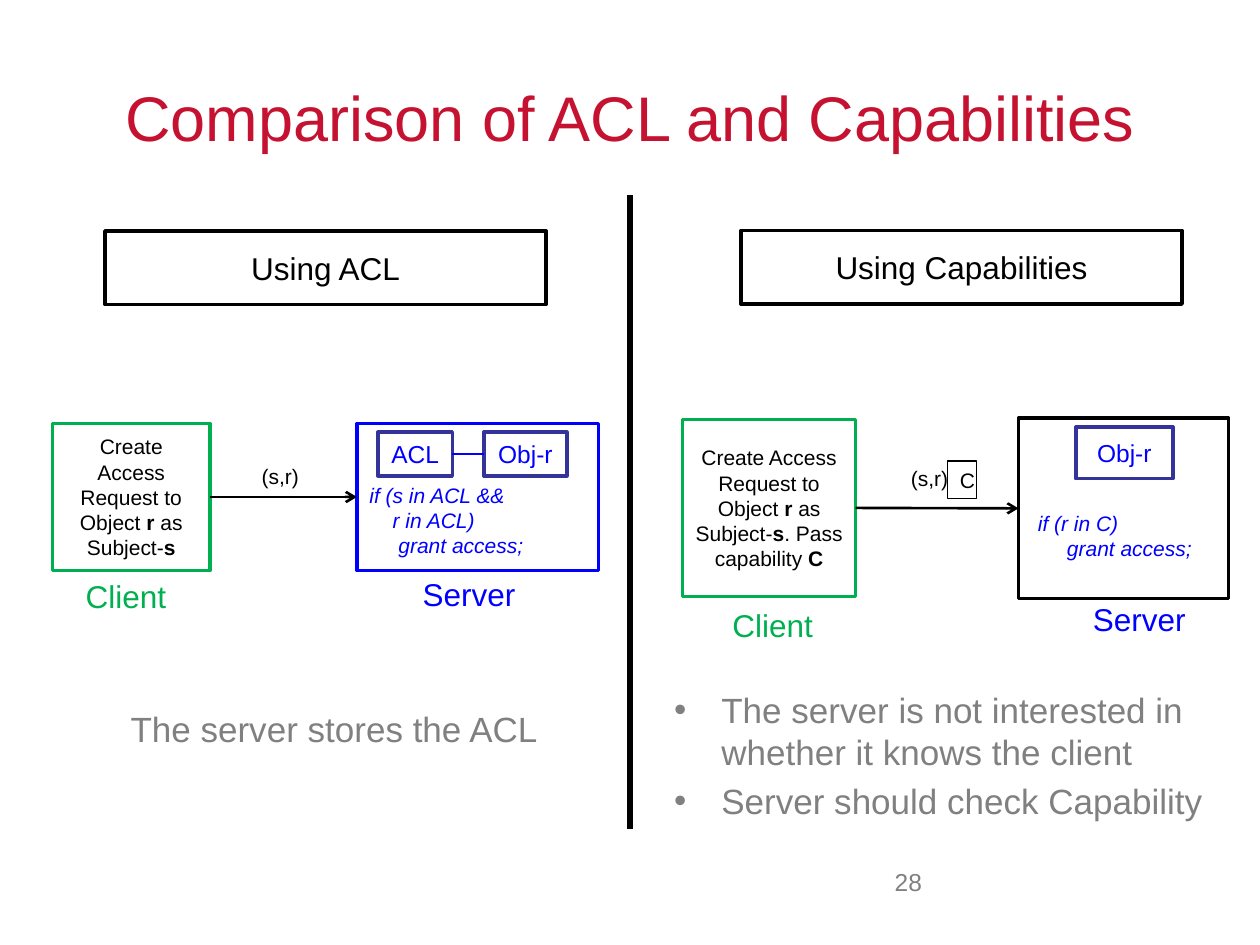
import dataclasses

import pptx
import pptx.dml.color
import pptx.enum.shapes
import pptx.enum.text
import pptx.oxml
import pptx.oxml.ns
import pptx.util

Pt = pptx.util.Pt
ALIGN = pptx.enum.text.PP_ALIGN
ANCHOR = pptx.enum.text.MSO_ANCHOR


def rgb(code):
    return pptx.dml.color.RGBColor.from_string(code)


@dataclasses.dataclass(frozen=True)
class Theme:
    font: str = "Arial"
    title_red: str = "C41230"
    grey: str = "808080"
    black: str = "000000"
    white: str = "FFFFFF"
    client_green: str = "00B050"
    server_blue: str = "0000FF"
    object_navy: str = "333399"
    title: int = 36
    note: int = 20
    label: int = 18
    item: int = 14
    detail: int = 12


THEME = Theme()


@dataclasses.dataclass(frozen=True)
class Box:
    left: float
    top: float
    width: float
    height: float

    def inner(self, left, top, width, height):
        return Box(self.left + left, self.top + top, width, height)

    def lengths(self):
        return [Pt(value) for value in dataclasses.astuple(self)]


def apply(target, values):
    for name, value in values.items():
        setattr(target, name, value)


def write(frame, paragraphs, size, color, align=ALIGN.LEFT, italic=False):
    """Each paragraph is a list of runs; a run in BOLD_TERMS form is (text, bold)."""
    font_format = {"name": THEME.font, "size": Pt(size), "italic": italic}
    for index, runs in enumerate(paragraphs):
        paragraph = frame.paragraphs[0] if index == 0 else frame.add_paragraph()
        apply(paragraph, {"alignment": align, "space_before": Pt(0)})
        for text, bold in runs:
            if text == "\n":
                paragraph.add_line_break()
                continue
            run = paragraph.add_run()
            run.text = text
            apply(run.font, {**font_format, "bold": bold})
            run.font.color.rgb = rgb(color)


def plain(*lines):
    return [[(line, False)] for line in lines]


def add_text(slide, box, paragraphs, size, color, wrap=True, **style):
    frame = slide.shapes.add_textbox(*box.lengths()).text_frame
    frame.word_wrap = wrap
    write(frame, paragraphs, size, color, **style)


def add_frame(slide, box, line, paragraphs=(), size=THEME.detail, color=THEME.black,
              weight=2, filled=True, anchor=ANCHOR.MIDDLE):
    shape = slide.shapes.add_shape(pptx.enum.shapes.MSO_SHAPE.RECTANGLE, *box.lengths())
    shape.shadow.inherit = False
    if filled:
        shape.fill.solid()
        shape.fill.fore_color.rgb = rgb(THEME.white)
    else:
        shape.fill.background()
    shape.line.color.rgb = rgb(line)
    shape.line.width = Pt(weight)
    apply(shape.text_frame, {"word_wrap": True, "vertical_anchor": anchor})
    write(shape.text_frame, paragraphs, size, color, ALIGN.CENTER)
    return shape


def add_line(slide, color, weight, start=(0, 0), end=(0, 0)):
    line = slide.shapes.add_connector(
        pptx.enum.shapes.MSO_CONNECTOR.STRAIGHT, *[Pt(v) for v in (*start, *end)])
    line.line.color.rgb = rgb(color)
    line.line.width = Pt(weight)
    properties = line.line._get_or_add_ln().getparent()
    properties.append(pptx.oxml.parse_xml(
        f'<a:effectLst {pptx.oxml.ns.nsdecls("a")}/>'))
    return line


def join(slide, source, target, color, weight, arrow=False):
    """Link the right side of one frame to the left side of another."""
    line = add_line(slide, color, weight)
    line.begin_connect(source, 3)
    line.end_connect(target, 1)
    if arrow:
        line.line._get_or_add_ln().append(pptx.oxml.parse_xml(
            f'<a:tailEnd {pptx.oxml.ns.nsdecls("a")} type="arrow"/>'))


def add_object(slide, box, name):
    return add_frame(slide, box, THEME.object_navy, plain(name),
                     THEME.item, THEME.server_blue)


def add_exchange(slide, heading, heading_box, client_box, server_box,
                 server_line, request, labels, message_box):
    """Heading, client and server with the request arrow between them."""
    add_frame(slide, heading_box, THEME.black, plain(heading), THEME.label)
    client = add_frame(slide, client_box, THEME.client_green, [request])
    server = add_frame(slide, server_box, server_line)
    join(slide, client, server, THEME.black, 1.5, arrow=True)
    add_text(slide, message_box, plain("(s,r)"), THEME.detail, THEME.black, wrap=False)
    roles = (("Client", THEME.client_green), ("Server", THEME.server_blue))
    for (role, color), label_box in zip(roles, labels):
        add_text(slide, label_box, plain(role), THEME.label, color, align=ALIGN.CENTER)


def add_rule(slide, box, paragraphs):
    add_text(slide, box, paragraphs, THEME.detail, THEME.server_blue, italic=True)


REQUEST = [("Create Access Request to Object ", False), ("r", True),
           (" as Subject-", False), ("s", True)]


def acl_half(slide, box):
    add_exchange(
        slide, "Using ACL", box.inner(60, 132, 252, 42),
        box.inner(30, 242, 90, 84), box.inner(204, 242, 138, 84),
        THEME.server_blue, REQUEST,
        (box.inner(36, 326.25, 72, 29), box.inner(220.5, 325.25, 95, 29)),
        box.inner(142.5, 261.5, 36, 21.6))
    # Access list kept beside its object
    acl = add_object(slide, box.inner(216, 247, 42.5, 25), "ACL")
    guarded = add_object(slide, box.inner(276.5, 247, 47.5, 25), "Obj-r")
    join(slide, acl, guarded, THEME.server_blue, 1)
    add_rule(slide, box.inner(204, 272, 138, 51), [
        [("if (s in ACL && ", False), ("\n", False), ("    r in ACL)", False)],
        [("     grant access;", False)]])
    add_text(slide, box.inner(44, 401, 294, 37.5), plain("The server stores the ACL"),
             THEME.note, THEME.grey, align=ALIGN.CENTER)


def capability_half(slide, box):
    add_exchange(
        slide, "Using Capabilities", box.inner(63.5, 131.75, 252, 42),
        box.inner(30, 239.75, 99, 101), box.inner(222, 239, 120, 103),
        THEME.black, REQUEST + [(". Pass capability ", False), ("C", True)],
        (box.inner(45.5, 342.75, 72, 29), box.inner(243.5, 339.25, 95, 29)),
        box.inner(153.5, 262.25, 36, 21.6))
    # Capability carried with the request
    add_frame(slide, box.inner(181.5, 263.5, 16.5, 21.6), THEME.black, plain("C"),
              weight=0.75, filled=False, anchor=ANCHOR.TOP)
    add_object(slide, box.inner(254.75, 244, 55.5, 29.5), "Obj-r")
    add_rule(slide, box.inner(226, 288, 112, 36),
             plain("if (r in C)", "     grant access;"))
    # Bulleted remarks
    remarks = slide.placeholders[1]
    place = box.inner(18, 390, 318, 78)
    apply(remarks, dict(zip(("left", "top", "width", "height"), place.lengths())))
    remarks.text_frame.auto_size = pptx.enum.text.MSO_AUTO_SIZE.NONE
    write(remarks.text_frame,
          plain("The server is not interested in whether it knows the client",
                "Server should check Capability"), THEME.note, THEME.grey)
    remarks.text_frame.paragraphs[1].space_before = Pt(4)


def title_band(slide, box):
    title = slide.shapes.title
    apply(title, dict(zip(("left", "top", "width", "height"), box.lengths())))
    title.text_frame.vertical_anchor = ANCHOR.MIDDLE
    write(title.text_frame, plain("Comparison of ACL and Capabilities"),
          THEME.title, THEME.title_red, ALIGN.CENTER)


def main():
    deck = pptx.Presentation()
    apply(deck, {"slide_width": Pt(720), "slide_height": Pt(540)})
    slide = deck.slides.add_slide(deck.slide_layouts[1])
    title_band(slide, Box(36, 21.5, 648, 90))
    acl_half(slide, Box(0, 0, 360, 540))
    capability_half(slide, Box(360, 0, 360, 540))
    # Divider and page number
    add_line(slide, THEME.black, 3, (360, 111.5), (360, 474))
    add_text(slide, Box(468, 492, 66, 37.5), plain("28"), THEME.item, THEME.grey,
             align=ALIGN.RIGHT)
    deck.save("out.pptx")


if __name__ == "__main__":
    main()
